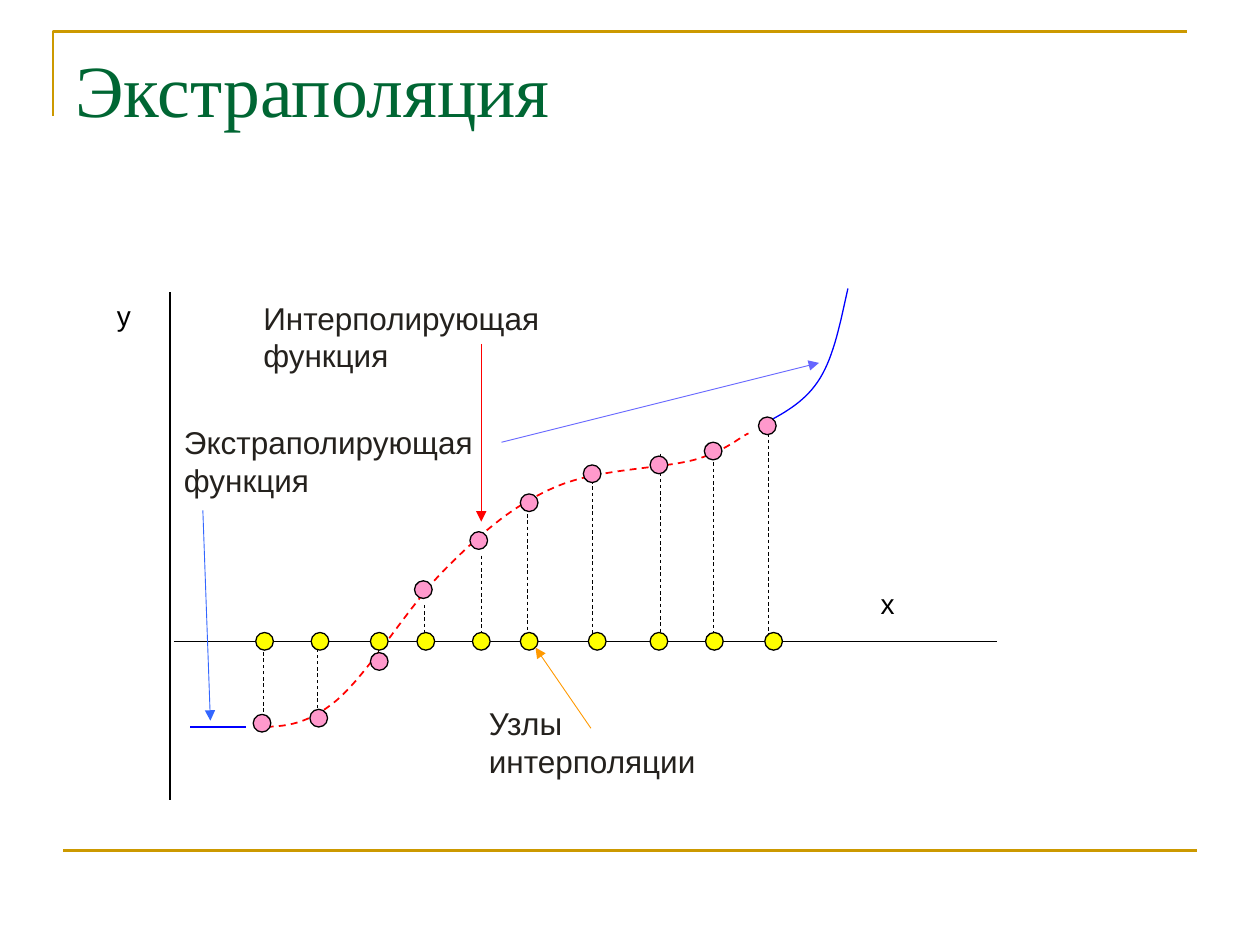
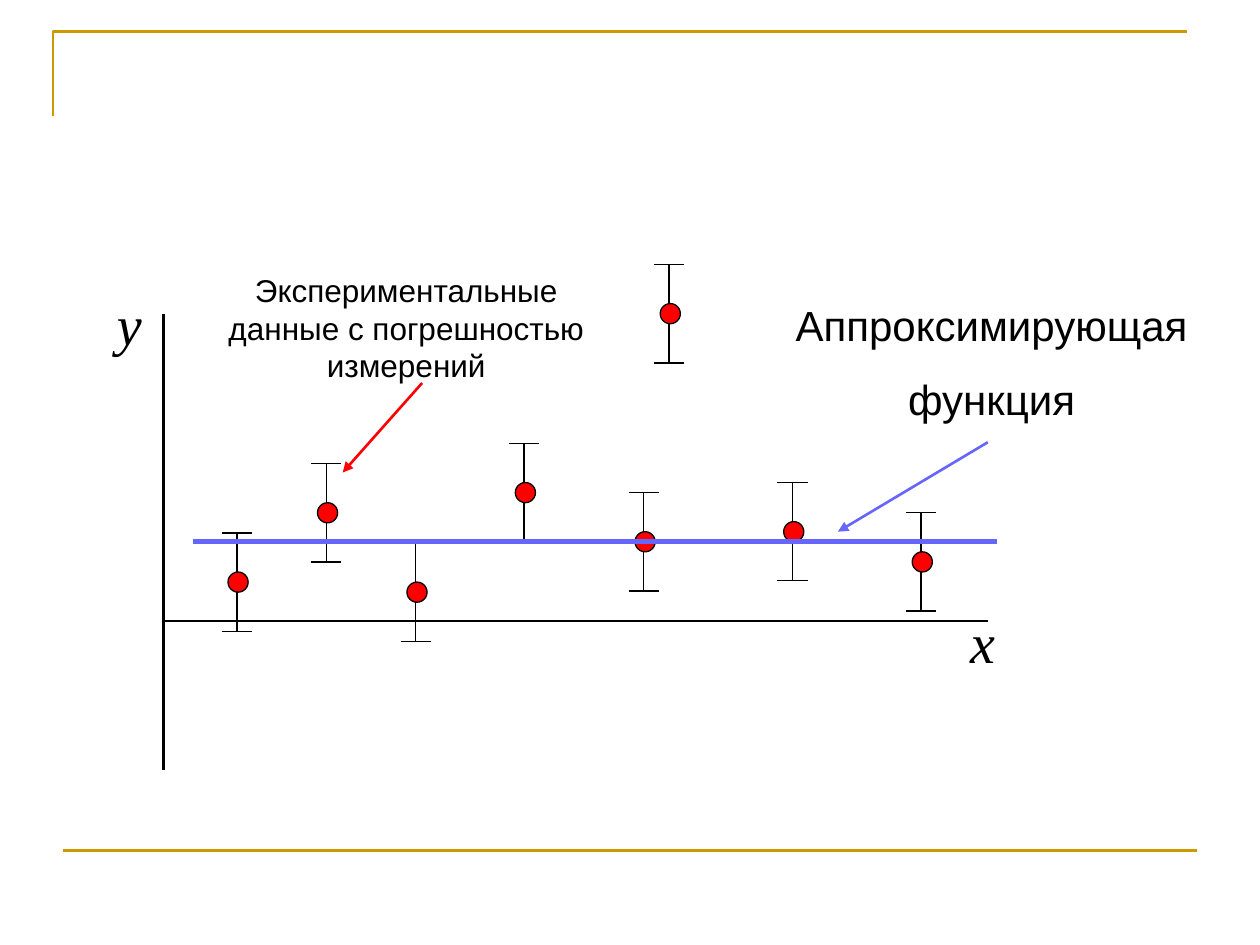
from lxml.etree import SubElement
from pptx import Presentation
from pptx.dml.color import RGBColor
from pptx.enum.dml import MSO_LINE
from pptx.enum.shapes import MSO_CONNECTOR, MSO_SHAPE
from pptx.enum.text import MSO_ANCHOR, PP_ALIGN
from pptx.oxml.ns import qn
from pptx.util import Inches, Pt

W, H = 10, 7.5
SANS, SERIF = "Arial", "Times New Roman"
COLORS = {
    "gold": "CC9900", "title": "006633", "label": "24211D", "black": "000000",
    "white": "FFFFFF", "red": "FF0000", "blue": "0000FF", "violet": "6666FF",
    "azure": "3366FF", "orange": "FF9900", "pink": "FF99CC", "yellow": "FFFF00",
}

# Extrapolation: node x, value x, value y, dashed drop x, dashed drop start y
AXIS_Y = 5.09
NODES = [
    (2.10, 2.08, 5.74, 2.09, 5.70), (2.54, 2.53, 5.70, 2.52, 5.72),
    (3.01, 3.01, 5.25, 3.00, 5.29), (3.38, 3.36, 4.68, 3.37, 4.80),
    (3.82, 3.80, 4.29, 3.82, 4.41), (4.20, 4.20, 3.99, 4.19, 4.03),
    (4.74, 4.70, 3.76, 4.70, 3.81), (5.23, 5.23, 3.69, 5.24, 3.60),
    (5.67, 5.66, 3.58, 5.66, 3.57), (6.14, 6.09, 3.38, 6.10, 3.39),
]
# Cubic curves: start point, then two controls and an end for each piece
INTERPOLANT = [
    (2.02, 5.77), (2.22, 5.77), (2.42, 5.77), (2.67, 5.56),
    (2.93, 5.34), (3.26, 4.78), (3.55, 4.50),
    (3.84, 4.21), (4.09, 4.00), (4.42, 3.86),
    (4.75, 3.72), (5.25, 3.72), (5.51, 3.65),
    (5.76, 3.58), (5.87, 3.47), (5.94, 3.44),
]
EXTRAPOLANT = [
    (6.07, 3.36), (6.24, 3.27), (6.40, 3.18), (6.51, 3.00),
    (6.62, 2.82), (6.67, 2.56), (6.73, 2.29),
]
FUNCTION_LABELS = [
    ("Узлы интерполяции", (3.88, 5.59, 1.75, 0.6)),
    ("Интерполирующая функция", (2.09, 2.37, 3.17, 0.91)),
    ("Экстраполирующая функция", (1.46, 3.36, 2.57, 0.68)),
]
AXIS_LABELS = [("y", (0.83, 2.32, 0.34, 0.81)), ("x", (6.89, 4.61, 0.44, 0.64))]
POINTERS = [
    ((1.61, 4.05), (1.67, 5.72), "azure"),
    ((4.69, 5.78), (4.25, 5.14), "orange"),
    ((3.98, 3.51), (6.50, 2.88), "violet"),
    ((3.82, 2.73), (3.82, 4.14), "red"),
]

# Approximation: measured points with equal error bars
MEASUREMENTS = [
    (1.88, 4.62), (2.59, 4.07), (3.30, 4.70), (4.16, 3.91),
    (5.11, 4.30), (6.29, 4.22), (7.31, 4.46), (5.31, 2.49),
]
ERROR, CAP, DOT_SHIFT = 0.39, 0.12, 0.01
FIT_LABELS = [
    (["y"], (0.83, 2.25, 0.63, 0.63), 32, SERIF, True, PP_ALIGN.LEFT),
    (["x"], (7.60, 4.77, 0.71, 0.63), 32, SERIF, True, PP_ALIGN.LEFT),
    (["Аппроксимирующая", "функция"], (6.10, 2.33, 3.54, 1.1), 24, SANS, False,
     PP_ALIGN.CENTER),
    (["Экспериментальные данные с погрешностью измерений"],
     (1.61, 2.10, 3.23, 1), 18, SANS, False, PP_ALIGN.CENTER),
]
FIT_POINTERS = [
    ((7.84, 3.51), (6.65, 4.22), "violet"),
    ((3.35, 3.04), (2.72, 3.75), "red"),
]


def rgb(name):
    return RGBColor.from_string(COLORS[name])


def set_line(sp, color, width, dashed=False):
    sp.line.color.rgb = rgb(color)
    sp.line.width = Pt(width)
    if dashed:
        sp.line.dash_style = MSO_LINE.DASH


def add_line(slide, start, end, color="black", width=0.75, dashed=False, arrow=False):
    sp = slide.shapes.add_connector(
        MSO_CONNECTOR.STRAIGHT, *(Inches(v) for v in (*start, *end)))
    set_line(sp, color, width, dashed)
    if arrow:
        SubElement(sp.line._get_or_add_ln(), qn("a:tailEnd"), type="triangle")
    SubElement(sp.element.spPr, qn("a:effectLst"))
    return sp


def add_dot(slide, x, y, color, size=0.14):
    sp = slide.shapes.add_shape(
        MSO_SHAPE.OVAL, Inches(x - size / 2), Inches(y - size / 2),
        Inches(size), Inches(size))
    sp.shadow.inherit = False
    sp.fill.solid()
    sp.fill.fore_color.rgb = rgb(color)
    set_line(sp, "black", 0.75)


def add_path(slide, points, color, width, dashed=False):
    points = [(Inches(x), Inches(y)) for x, y in points]
    builder = slide.shapes.build_freeform(*points[0])
    builder.add_line_segments(points[1:], close=False)
    sp = builder.convert_to_shape()
    sp.shadow.inherit = False
    sp.fill.background()
    set_line(sp, color, width, dashed)
    return sp


def bezier(points, steps=16):
    """Sample a chain of cubic pieces into a fine polyline."""
    line = [points[0]]
    for i in range(0, len(points) - 1, 3):
        piece = points[i:i + 4]
        for k in range(1, steps + 1):
            t = k / steps
            weights = ((1 - t) ** 3, 3 * t * (1 - t) ** 2, 3 * t * t * (1 - t), t ** 3)
            line.append(tuple(sum(w * p[axis] for w, p in zip(weights, piece))
                              for axis in (0, 1)))
    return line


def add_text(slide, paragraphs, box, size, font=SANS, color="black", italic=False,
             align=PP_ALIGN.LEFT, inset=True, fill=None):
    sp = slide.shapes.add_textbox(*(Inches(v) for v in box))
    if fill:
        sp.fill.solid()
        sp.fill.fore_color.rgb = rgb(fill)
    tf = sp.text_frame
    tf.word_wrap = True
    tf.vertical_anchor = MSO_ANCHOR.TOP
    if not inset:
        tf.margin_left = tf.margin_right = tf.margin_top = tf.margin_bottom = 0
    for i, text in enumerate(paragraphs):
        p = tf.add_paragraph() if i else tf.paragraphs[0]
        p.alignment = align
        if i:
            p.space_before = Pt(size * 0.55)
        r = p.add_run()
        r.text = text
        r.font.size, r.font.name, r.font.italic = Pt(size), font, italic
        r.font.color.rgb = rgb(color)


def add_frame(prs, slide):
    """Draw the gold corner and bottom rule, then move them to the master."""
    corner = add_path(slide, [(0.42, 0.92), (0.42, 0.25), (9.42, 0.25)], "gold", 1.5)
    rule = add_line(slide, (0.05 * W, 0.9 * H), (0.95 * W, 0.9 * H), "gold", 1.5)
    for sp in (corner, rule):
        prs.slide_master.shapes.element.append(sp.element)


def draw_extrapolation(slide):
    add_text(slide, ["Экстраполяция"], (0.5, 0.3, 9, 1.25), 42, SERIF, "title")
    add_path(slide, bezier(EXTRAPOLANT), "blue", 0.75)
    for text, box in FUNCTION_LABELS:
        add_text(slide, [text], box, 18, color="label", inset=False)
    for text, box in AXIS_LABELS:
        add_text(slide, [text], box, 16, fill="white")
    for _, _, _, x, y in NODES:
        add_line(slide, (x, y), (x, AXIS_Y), width=0.5, dashed=True)
    add_path(slide, bezier(INTERPOLANT), "red", 1, dashed=True)
    add_line(slide, (1.35, 2.32), (1.35, 6.35))
    add_line(slide, (1.38, AXIS_Y), (7.91, AXIS_Y))
    add_line(slide, (1.95, 5.77), (1.51, 5.77), "blue")
    for _, x, y, _, _ in NODES:
        add_dot(slide, x, y, "pink")
    for node in NODES:
        add_dot(slide, node[0], AXIS_Y, "yellow")
    for start, end, color in POINTERS:
        add_line(slide, start, end, color, 0.5, arrow=True)


def draw_approximation(slide):
    add_line(slide, (1.3, 2.49), (1.3, 6.11), width=1.5)
    add_line(slide, (1.3, 4.93), (7.84, 4.93), width=1.5)
    for x, y in MEASUREMENTS:
        add_line(slide, (x, y - ERROR), (x, y + ERROR))
        for end in (y - ERROR, y + ERROR):
            add_line(slide, (x - CAP, end), (x + CAP, end))
        add_dot(slide, x + DOT_SHIFT, y, "red", 0.16)
    add_line(slide, (1.53, 4.3), (7.91, 4.3), "violet", 3)
    for paragraphs, box, size, font, italic, align in FIT_LABELS:
        add_text(slide, paragraphs, box, size, font, italic=italic, align=align)
    for start, end, color in FIT_POINTERS:
        add_line(slide, start, end, color, 1.5, arrow=True)


def main():
    prs = Presentation()
    prs.slide_width, prs.slide_height = Inches(W), Inches(H)
    blank = prs.slide_layouts[6]
    slides = [prs.slides.add_slide(blank) for _ in range(2)]
    add_frame(prs, slides[0])
    draw_extrapolation(slides[0])
    draw_approximation(slides[1])
    prs.save("out.pptx")


if __name__ == "__main__":
    main()
